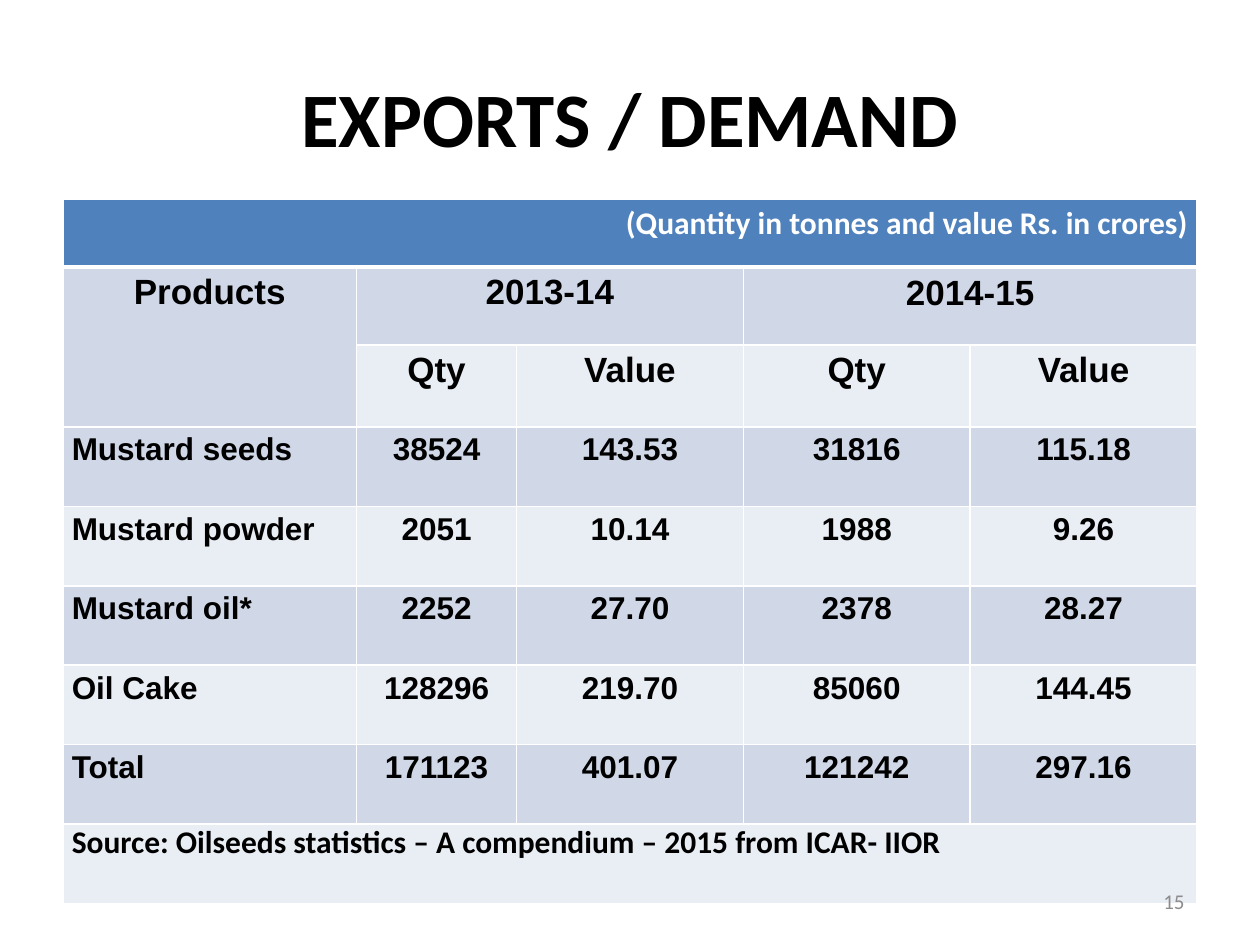
from dataclasses import dataclass

from lxml.etree import SubElement
from pptx import Presentation
from pptx.dml.color import RGBColor
from pptx.enum.text import MSO_ANCHOR as Anchor, PP_ALIGN as Align
from pptx.oxml.ns import qn
from pptx.util import Inches, Pt

COLORS = {
    "header": "4F81BD",
    "dark_band": "D0D8E8",
    "light_band": "E9EDF4",
    "white": "FFFFFF",
    "black": "000000",
    "gray": "8C8C8C",
}
COL_WIDTHS = [2.33, 1.27, 1.8, 1.8, 1.8]
ROW_HEIGHTS = [0.54, 0.62, 0.65] + [0.63] * 6
PRODUCTS = [
    ("Mustard seeds", "38524", "143.53", "31816", "115.18"),
    ("Mustard powder", "2051", "10.14", "1988", "9.26"),
    ("Mustard oil*", "2252", "27.70", "2378", "28.27"),
    ("Oil Cake", "128296", "219.70", "85060", "144.45"),
    ("Total", "171123", "401.07", "121242", "297.16"),
]


@dataclass
class Entry:
    row: int
    col: int
    text: str
    size: int = 18
    font: str = "Arial"
    color: str = "black"
    align: Align = Align.CENTER
    spacing: float | None = 1.15
    rows: int = 1
    cols: int = 1
    margin_x: float = 0.07
    margin_y: float = 0


def rgb(name: str) -> RGBColor:
    return RGBColor.from_string(COLORS[name])


def set_text(tf, text: str, size: int, font: str, color: str,
             align: Align, bold: bool = False) -> None:
    tf.text = text
    p = tf.paragraphs[0]
    p.alignment = align
    r = p.runs[0]
    r.font.size, r.font.name, r.font.bold = Pt(size), font, bold
    r.font.color.rgb = rgb(color)


def style_cell(cell, row: int) -> None:
    """Draw white borders, thicker below the header, and the band fill."""
    widths = {"L": 1, "R": 1, "T": 3 if row == 1 else 1, "B": 3 if row == 0 else 1}
    tcPr = cell._tc.get_or_add_tcPr()
    for side, width in widths.items():
        ln = SubElement(tcPr, qn(f"a:ln{side}"), w=str(Pt(width)))
        fill = SubElement(ln, qn("a:solidFill"))
        SubElement(fill, qn("a:srgbClr"), val=COLORS["white"])
    band = "header" if row == 0 else "dark_band" if row % 2 else "light_band"
    cell.fill.solid()
    cell.fill.fore_color.rgb = rgb(band)


def write_entry(table, e: Entry) -> None:
    cell = table.cell(e.row, e.col)
    if e.rows > 1 or e.cols > 1:
        cell.merge(table.cell(e.row + e.rows - 1, e.col + e.cols - 1))
    cell.margin_left = cell.margin_right = Inches(e.margin_x)
    cell.margin_top = cell.margin_bottom = Inches(e.margin_y)
    set_text(cell.text_frame, e.text, e.size, e.font, e.color, e.align, bold=True)
    if e.spacing:
        cell.text_frame.paragraphs[0].line_spacing = e.spacing


def table_entries() -> list[Entry]:
    entries = [
        Entry(0, 0, " (Quantity in tonnes and value Rs. in crores)", font="Calibri",
              color="white", align=Align.RIGHT, cols=5),
        Entry(1, 0, "Products", size=20, rows=2),
        Entry(1, 1, "2013-14", size=20, cols=2),
        Entry(1, 3, "2014-15", size=20, cols=2, spacing=None,
              margin_x=0.1, margin_y=0.05),
        Entry(8, 0, "Source: Oilseeds statistics – A compendium – 2015 from ICAR- IIOR",
              font="Calibri", align=Align.LEFT, spacing=None, cols=5),
    ]
    entries += [Entry(2, c, text, size=20)
                for c, text in enumerate(["Qty", "Value"] * 2, start=1)]
    entries += [Entry(r, c, text, align=Align.CENTER if c else Align.LEFT)
                for r, values in enumerate(PRODUCTS, start=3)
                for c, text in enumerate(values)]
    return entries


def add_export_table(s) -> None:
    frame = s.shapes.add_table(len(ROW_HEIGHTS), len(COL_WIDTHS), Inches(0.5),
                               Inches(1.58), Inches(9), Inches(sum(ROW_HEIGHTS)))
    table = frame.table
    for column, width in zip(table.columns, COL_WIDTHS):
        column.width = Inches(width)
    for i, (row, height) in enumerate(zip(table.rows, ROW_HEIGHTS)):
        row.height = Inches(height)
        for cell in row.cells:
            style_cell(cell, i)
    for entry in table_entries():
        write_entry(table, entry)


def main() -> None:
    prs = Presentation()
    prs.slide_width, prs.slide_height = Inches(10), Inches(7.5)
    s = prs.slides.add_slide(prs.slide_layouts[5])

    # Title
    title = s.shapes.title
    title.left, title.top = Inches(0.5), Inches(0.3)
    title.width, title.height = Inches(9), Inches(1.25)
    title.text_frame.vertical_anchor = Anchor.MIDDLE
    set_text(title.text_frame, "EXPORTS / DEMAND", 44, "Calibri", "black",
             Align.CENTER, bold=True)

    # Export table
    add_export_table(s)

    # Slide number
    sp = s.shapes.add_textbox(Inches(7.17), Inches(6.95), Inches(2.33), Inches(0.4))
    tf = sp.text_frame
    tf.word_wrap = True
    tf.vertical_anchor = Anchor.MIDDLE
    set_text(tf, "15", 12, "Calibri", "gray", Align.RIGHT)

    prs.save("out.pptx")


if __name__ == "__main__":
    main()
